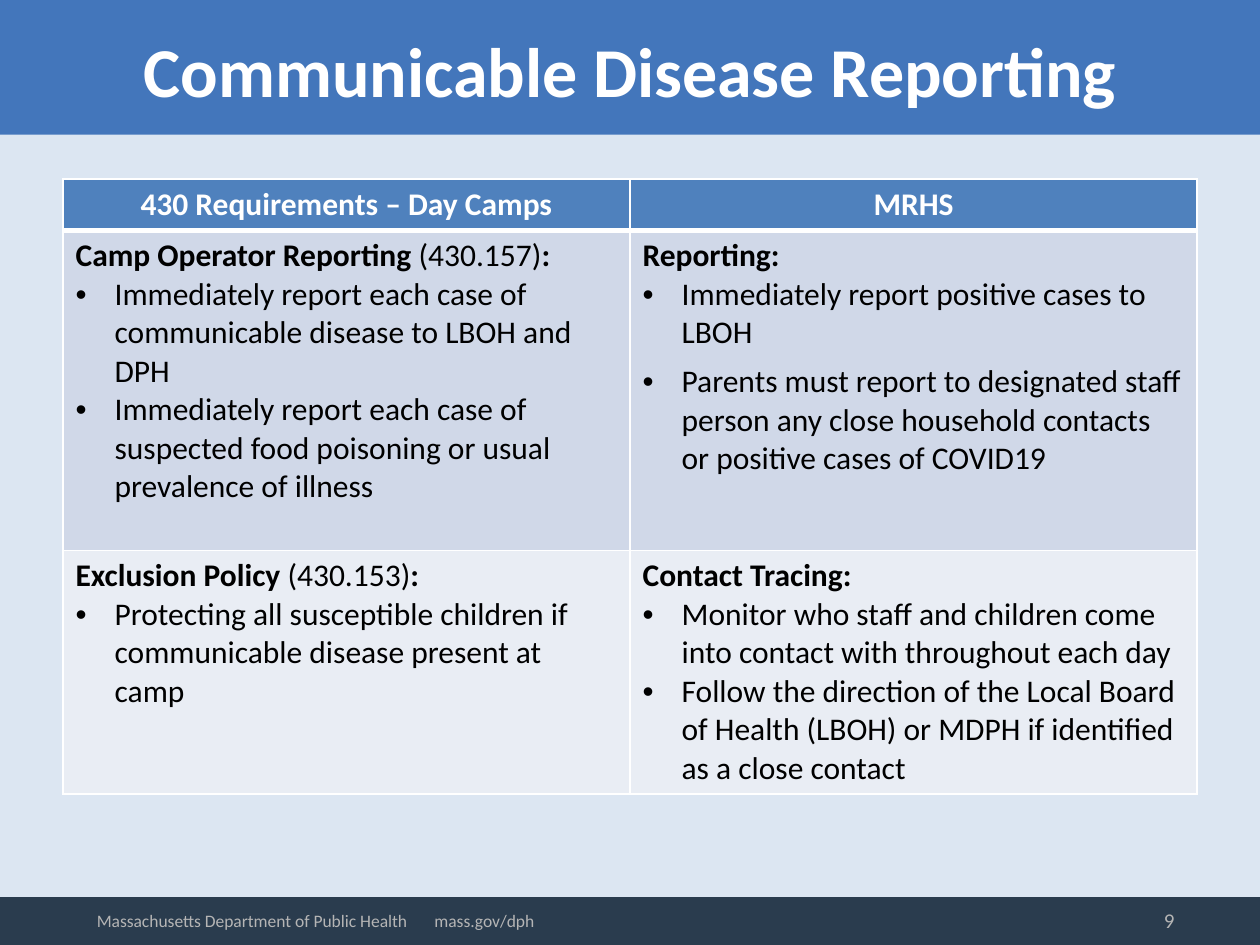
from dataclasses import dataclass

import pptx
import pptx.dml.color
import pptx.enum.shapes
import pptx.enum.text
import pptx.oxml
import pptx.oxml.ns
import pptx.util
from pptx.util import Inches

ALIGN = pptx.enum.text.PP_ALIGN
MIDDLE = pptx.enum.text.MSO_ANCHOR.MIDDLE


@dataclass(frozen=True)
class Theme:
    font: str = "Calibri"
    background: str = "DCE6F2"
    title_bar: str = "4376BB"
    footer_bar: str = "2A3C4E"
    header: str = "4F81BD"
    bands: tuple = ("D0D8E8", "E9EDF4")
    white: str = "FFFFFF"
    text: str = "000000"
    muted: str = "B5B5B5"
    title_size: int = 40
    table_size: int = 18
    number_size: int = 12
    footer_size: int = 10


THEME = Theme()
HEADERS = ["430 Requirements – Day Camps", "MRHS"]
# Each cell: heading, regulation number, bullets, space after each bullet
ROWS = [
    [
        ("Camp Operator Reporting", "430.157", [
            "Immediately report each case of communicable disease to LBOH and DPH",
            "Immediately report each case of suspected food poisoning or usual "
            "prevalence of illness"], 0),
        ("Reporting", None, [
            "Immediately report positive cases to LBOH",
            "Parents must report to designated staff person any close household "
            "contacts or positive cases of COVID19"], 6),
    ],
    [
        ("Exclusion Policy", "430.153", [
            "Protecting all susceptible children if communicable disease "
            "present at camp"], 0),
        ("Contact Tracing", None, [
            "Monitor who staff and children come into contact with throughout each day",
            "Follow the direction of the Local Board of Health (LBOH) or MDPH if "
            "identified as a close contact"], 0),
    ],
]
ROW_HEIGHTS = [0.41, 2.54, 1.93]


def rgb(color):
    return pptx.dml.color.RGBColor.from_string(color)


def xml(markup):
    """Parse one DrawingML element whose tag starts with a:."""
    tag, rest = markup[1:].split(" ", 1)
    return pptx.oxml.parse_xml(f"<{tag} {pptx.oxml.ns.nsdecls('a')} {rest}")


def add_run(p, text, size, color, bold=False):
    r = p.add_run()
    r.text = text
    r.font.name = THEME.font
    r.font.size = pptx.util.Pt(size)
    r.font.color.rgb = rgb(color)
    r.font.bold = bold


def add_bar(s, top, height, color):
    bar = s.shapes.add_shape(pptx.enum.shapes.MSO_SHAPE.RECTANGLE,
                             0, Inches(top), Inches(10), Inches(height))
    bar.shadow.inherit = False
    bar.fill.solid()
    bar.fill.fore_color.rgb = rgb(color)
    bar.line.fill.background()
    return bar


def add_title(s, text, bar):
    """Fill the title placeholder and stack it just above its bar."""
    title = s.shapes.title
    bar.element.addnext(title.element)
    title.left, title.top = Inches(0.5), Inches(0.03)
    title.width, title.height = Inches(9), Inches(1.05)
    tf = title.text_frame
    tf.vertical_anchor = MIDDLE
    p = tf.paragraphs[0]
    p.alignment = ALIGN.CENTER
    add_run(p, text, THEME.title_size, THEME.white, True)


def add_label(s, box, text, size, align):
    tf = s.shapes.add_textbox(*map(Inches, box)).text_frame
    tf.word_wrap = True
    tf.vertical_anchor = MIDDLE
    p = tf.paragraphs[0]
    p.alignment = align
    add_run(p, text, size, THEME.muted)
    return p


def add_tab_stop(p, position):
    p._p.get_or_add_pPr().append(xml(
        f'<a:tabLst ><a:tab pos="{Inches(position)}" algn="l"/></a:tabLst>'))


def make_bullet(p):
    pPr = p._p.get_or_add_pPr()
    pPr.set("marL", str(Inches(0.31)))
    pPr.set("indent", str(-Inches(0.31)))
    pPr.append(xml('<a:buFont typeface="Arial"/>'))
    pPr.append(xml('<a:buChar char="•"/>'))


def style_cell(cell, color, top=1, bottom=1):
    """Set the fill and white borders, with top and bottom widths in points."""
    cell.fill.solid()
    cell.fill.fore_color.rgb = rgb(color)
    tcPr = cell._tc.get_or_add_tcPr()
    widths = {"L": 1, "R": 1, "T": top, "B": bottom}
    for i, (side, width) in enumerate(widths.items()):
        tcPr.insert(i, xml(
            f'<a:ln{side} w="{pptx.util.Pt(width)}"><a:solidFill>'
            f'<a:srgbClr val="{THEME.white}"/></a:solidFill></a:ln{side}>'))


def fill_cell(cell, heading, regulation, bullets, space_after):
    size, color = THEME.table_size, THEME.text
    tf = cell.text_frame
    p = tf.paragraphs[0]
    if regulation:
        add_run(p, f"{heading} ", size, color, True)
        add_run(p, f"({regulation})", size, color)
        add_run(p, ":", size, color, True)
    else:
        add_run(p, f"{heading}:", size, color, True)
    for bullet in bullets:
        p = tf.add_paragraph()
        p.space_after = pptx.util.Pt(space_after)
        make_bullet(p)
        add_run(p, bullet, size, color)


def add_comparison_table(s):
    table = s.shapes.add_table(
        len(ROW_HEIGHTS), len(HEADERS), Inches(0.5), Inches(1.42),
        Inches(9), Inches(sum(ROW_HEIGHTS))).table
    for row, height in zip(table.rows, ROW_HEIGHTS):
        row.height = Inches(height)
    for col, text in enumerate(HEADERS):
        cell = table.cell(0, col)
        style_cell(cell, THEME.header, bottom=3)
        p = cell.text_frame.paragraphs[0]
        p.alignment = ALIGN.CENTER
        add_run(p, text, THEME.table_size, THEME.white, True)
    for row, (contents, band) in enumerate(zip(ROWS, THEME.bands), 1):
        for col, content in enumerate(contents):
            cell = table.cell(row, col)
            style_cell(cell, band, top=3 if row == 1 else 1)
            fill_cell(cell, *content)


def main():
    prs = pptx.Presentation()
    prs.slide_width, prs.slide_height = Inches(10), Inches(7.5)
    s = prs.slides.add_slide(prs.slide_layouts[5])
    s.background.fill.solid()
    s.background.fill.fore_color.rgb = rgb(THEME.background)

    title_bar = add_bar(s, 0, 1.07, THEME.title_bar)
    add_bar(s, 7.12, 0.38, THEME.footer_bar)
    add_title(s, "Communicable Disease Reporting", title_bar)
    add_comparison_table(s)
    add_label(s, (7.18, 7.1, 2.24, 0.4), "9", THEME.number_size, ALIGN.RIGHT)
    footer = add_label(s, (0.67, 7.12, 4.17, 0.37),
                       "Massachusetts Department of Public Health\tmass.gov/dph",
                       THEME.footer_size, ALIGN.LEFT)
    add_tab_stop(footer, 2.68)
    prs.save("out.pptx")


if __name__ == "__main__":
    main()
